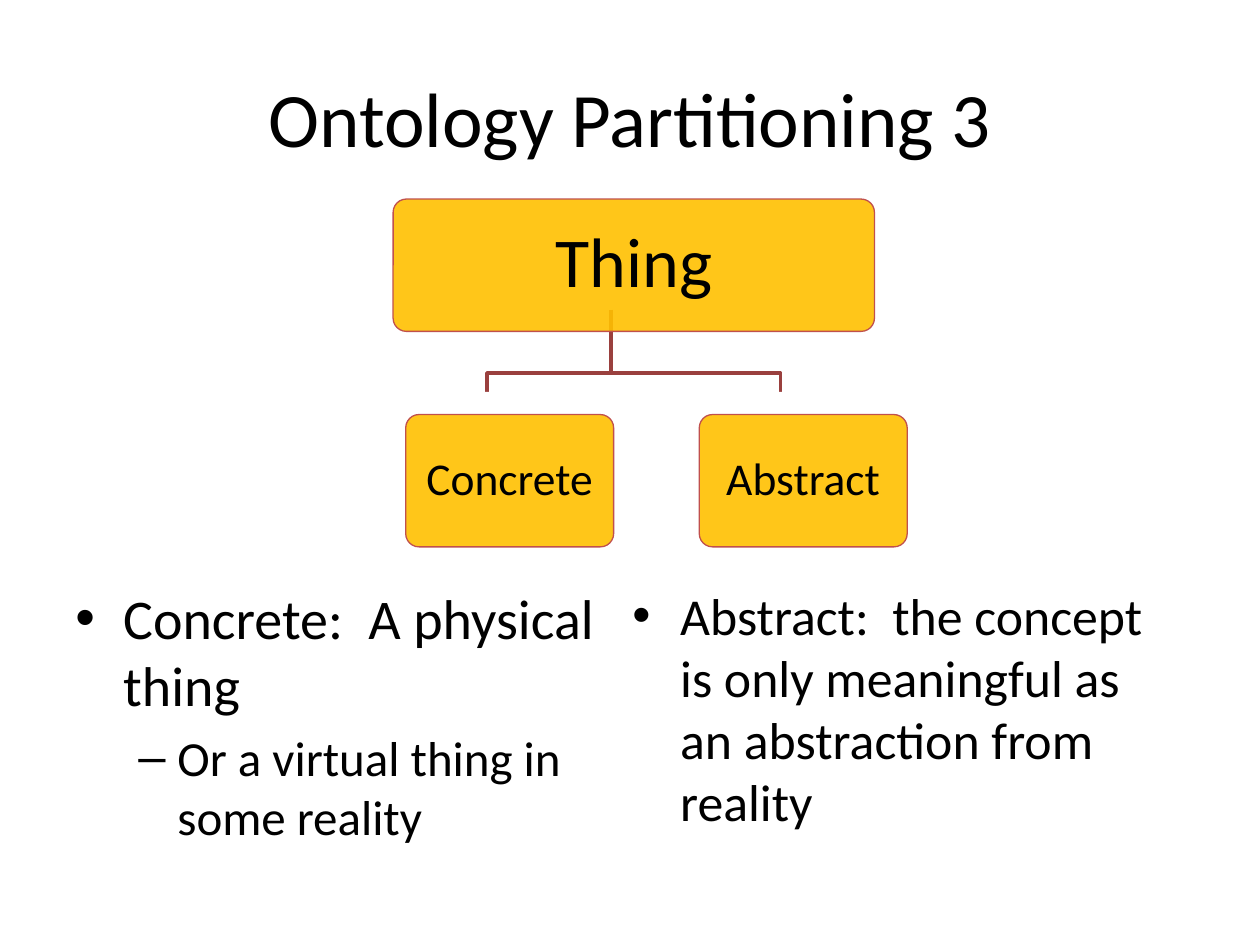
from dataclasses import dataclass

from lxml.etree import SubElement
from pptx import Presentation
from pptx.dml.color import RGBColor
from pptx.enum.shapes import MSO_SHAPE
from pptx.enum.text import MSO_ANCHOR, PP_ALIGN
from pptx.oxml.ns import qn
from pptx.util import Inches, Pt

FONT = "Calibri"
BLACK, WHITE = "000000", "FFFFFF"
GOLD, RED, ROOF = "FFC000", "C0504D", "9A403E"
HIGH = 1.05  # height of every node
DROP = 0.18  # offset of a leaf from its white plate


@dataclass
class Node:
    text: str
    left: float
    top: float
    width: float
    size: float
    pad: float
    plate: bool = False


@dataclass
class Item:
    text: str
    size: float
    mark: str = "•"
    margin: float = 0.38
    hang: float = 0.38
    level: int = 0


NODES = [
    Node("Thing", 3.12, 1.58, 3.82, 40, 0.15),
    Node("Concrete", 3.22, 3.29, 1.65, 26, 0.08, True),
    Node("Abstract", 5.55, 3.29, 1.65, 26, 0.08, True),
]
LEFT = [
    Item("Concrete:  A physical thing", 32),
    Item("Or a virtual thing in some reality", 28, "–", 0.81, 0.31, 1),
]
RIGHT = [
    Item("Abstract:  the concept is only meaningful as an abstraction from reality", 29.6),
]


def color(code: str) -> RGBColor:
    return RGBColor.from_string(code)


def write(para, text: str, size: float, align=PP_ALIGN.LEFT, line=None, before=None) -> None:
    run = para.add_run()
    run.text = text
    run.font.name = FONT
    run.font.size = Pt(size)
    run.font.color.rgb = color(BLACK)
    para.alignment = align
    if line is not None:
        para.line_spacing = line
    if before is not None:
        para.space_before = Pt(before)


def add_frame(slide, left: float, top: float, width: float, height: float):
    box = slide.shapes.add_textbox(Inches(left), Inches(top), Inches(width), Inches(height))
    box.text_frame.word_wrap = True
    return box.text_frame


def add_round(slide, left: float, top: float, width: float, fill: str):
    shape = slide.shapes.add_shape(
        MSO_SHAPE.ROUNDED_RECTANGLE, Inches(left), Inches(top), Inches(width), Inches(HIGH))
    shape.adjustments[0] = 0.1
    shape.shadow.inherit = False
    shape.fill.solid()
    shape.fill.fore_color.rgb = color(fill)
    shape.line.fill.background()
    return shape


def add_node(slide, node: Node) -> None:
    if node.plate:
        add_round(slide, node.left - DROP, node.top - DROP, node.width, WHITE)
    shape = add_round(slide, node.left, node.top, node.width, GOLD)
    tint = shape.fill._xPr.find(qn("a:solidFill"))[0]
    SubElement(tint, qn("a:alpha"), val="90000")
    shape.line.color.rgb = color(RED)
    shape.line.width = Pt(0.75)
    frame = shape.text_frame
    frame.word_wrap = True
    frame.vertical_anchor = MSO_ANCHOR.MIDDLE
    frame.margin_left = frame.margin_right = Inches(node.pad)
    frame.margin_top = frame.margin_bottom = Inches(node.pad)
    write(frame.paragraphs[0], node.text, node.size, align=PP_ALIGN.CENTER, line=0.9)


def add_branch(slide, end: float) -> None:
    stem, top, bend, foot = 4.85, 2.46, 2.96, 3.11
    pen = slide.shapes.build_freeform(Inches(stem), Inches(top))
    turns = [(stem, bend), (end, bend), (end, foot)]
    pen.add_line_segments([(Inches(x), Inches(y)) for x, y in turns], close=False)
    shape = pen.convert_to_shape()
    shape.shadow.inherit = False
    shape.fill.background()
    shape.line.color.rgb = color(ROOF)
    shape.line.width = Pt(2)


def add_list(slide, left: float, height: float, items: list[Item]) -> None:
    frame = add_frame(slide, left, 4.58, 4.33, height)
    for i, item in enumerate(items):
        para = frame.add_paragraph() if i else frame.paragraphs[0]
        para.level = item.level
        write(para, item.text, item.size, before=round(item.size * 0.2, 1))
        props = para._p.get_or_add_pPr()
        props.set("marL", str(Inches(item.margin)))
        props.set("indent", str(-Inches(item.hang)))
        SubElement(props, qn("a:buFont"), typeface="Arial")
        SubElement(props, qn("a:buChar"), char=item.mark)


def main() -> None:
    deck = Presentation()
    deck.slide_width, deck.slide_height = Inches(10), Inches(7.5)
    slide = deck.slides.add_slide(deck.slide_layouts[6])

    # Title
    title = add_frame(slide, 0.5, 0.3, 9, 1.25)
    title.vertical_anchor = MSO_ANCHOR.MIDDLE
    write(title.paragraphs[0], "Ontology Partitioning 3", 44, align=PP_ALIGN.CENTER)

    # Tree: branches end above the middle of each plate
    for node in reversed(NODES):
        if node.plate:
            add_branch(slide, node.left - DROP + node.width / 2)
    for node in NODES:
        add_node(slide, node)

    # Notes on the two leaves
    add_list(slide, 0.5, 2.12, LEFT)
    add_list(slide, 4.92, 1.92, RIGHT)

    deck.save("out.pptx")


if __name__ == "__main__":
    main()
